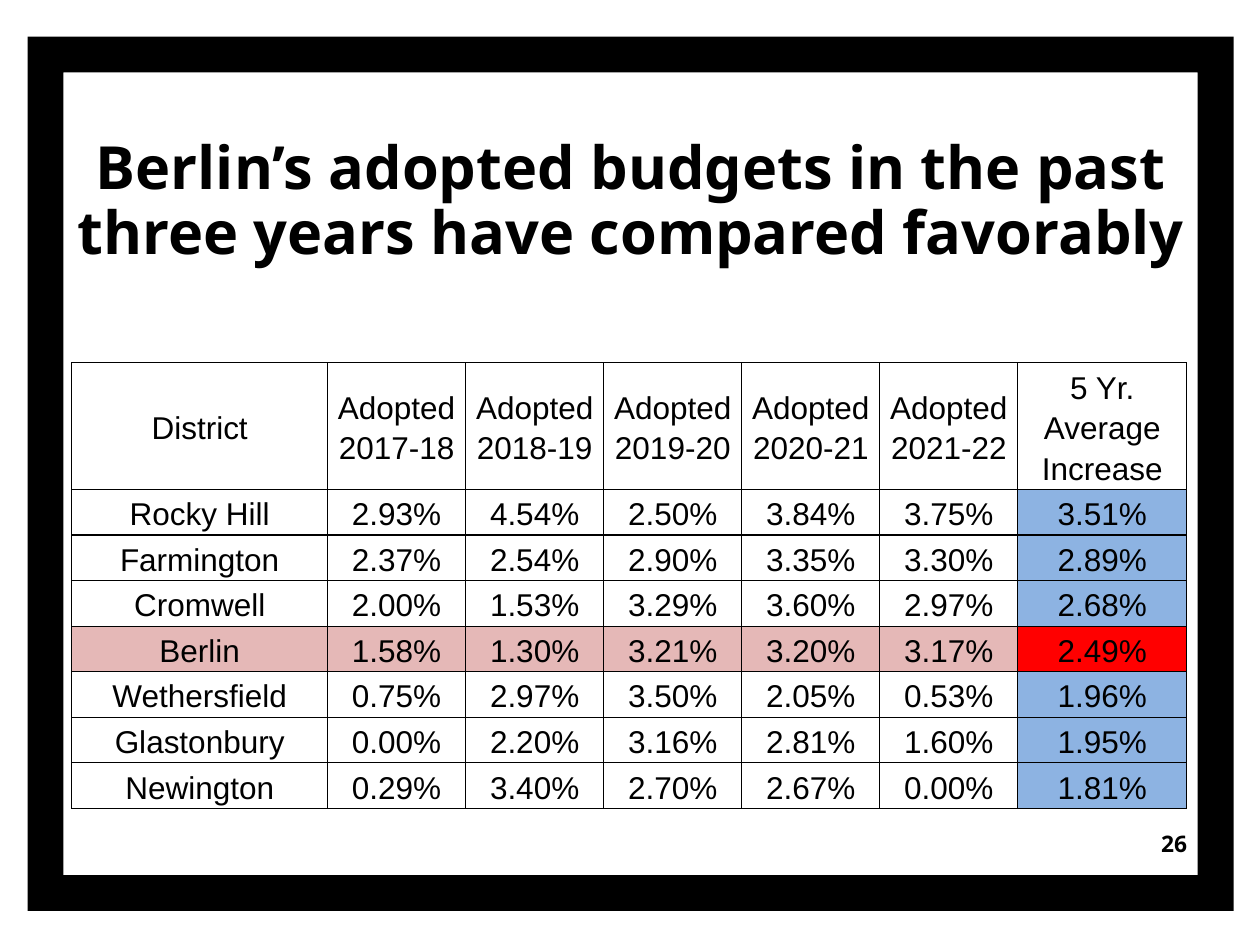
from dataclasses import dataclass

from pptx import Presentation
from pptx.dml.color import RGBColor as Rgb
from pptx.enum.shapes import MSO_SHAPE as Shape
from pptx.enum.text import MSO_ANCHOR as Anchor, MSO_AUTO_SIZE as Fit, PP_ALIGN as Align
from pptx.oxml import parse_xml
from pptx.oxml.ns import nsdecls
from pptx.util import Inches, Pt


@dataclass(frozen=True)
class Theme:
    ink: str = "000000"
    paper: str = "FFFFFF"
    blue: str = "8DB3E2"
    pink: str = "E5B8B7"
    red: str = "FF0000"
    head: str = "Noto Sans"
    body: str = "Arial"
    title: int = 34
    cell: int = 18
    page: int = 13
    rule: float = 0.75


HEADS = (["District"]
         + [f"Adopted 20{year}-{year + 1}" for year in range(17, 22)]
         + ["5 Yr. Average Increase"])
RATES = {
    "Rocky Hill": (2.93, 4.54, 2.50, 3.84, 3.75, 3.51),
    "Farmington": (2.37, 2.54, 2.90, 3.35, 3.30, 2.89),
    "Cromwell": (2.00, 1.53, 3.29, 3.60, 2.97, 2.68),
    "Berlin": (1.58, 1.30, 3.21, 3.20, 3.17, 2.49),
    "Wethersfield": (0.75, 2.97, 3.50, 2.05, 0.53, 1.96),
    "Glastonbury": (0.00, 2.20, 3.16, 2.81, 1.60, 1.95),
    "Newington": (0.29, 3.40, 2.70, 2.67, 0.00, 1.81),
}
HOME = "Berlin"


def write(frame, text, font, size, color, bold=False, align=Align.CENTER, space=1.0):
    para = frame.paragraphs[0]
    para.alignment = align
    para.line_spacing = space
    run = para.add_run()
    run.text = text
    run.font.name = font
    run.font.size = Pt(size)
    run.font.bold = bold
    run.font.color.rgb = Rgb.from_string(color)


def pad(item, side, edge):
    """Set the insets of a text frame or a table cell, in inches."""
    item.margin_left = item.margin_right = Inches(side)
    item.margin_top = item.margin_bottom = Inches(edge)


def rule(cell, color, width):
    """Draw a line on all four sides of a cell; call before filling it."""
    props = cell._tc.get_or_add_tcPr()
    for side in "LRTB":
        props.append(parse_xml(
            f'<a:ln{side} {nsdecls("a")} w="{Pt(width)}"><a:solidFill>'
            f'<a:srgbClr val="{color}"/></a:solidFill></a:ln{side}>'))


class Page:
    """One slide, measured on a grid of 100 columns by 75 rows."""

    def __init__(self, deck, theme):
        self.theme = theme
        self.col = deck.slide_width / 100
        self.row = deck.slide_height / 75
        self.slide = deck.slides.add_slide(deck.slide_layouts[5])
        self.shapes = self.slide.shapes
        back = self.slide.background.fill
        back.solid()
        back.fore_color.rgb = Rgb.from_string(theme.paper)

    def box(self, x, y, wide, high):
        return [int(n) for n in (x * self.col, y * self.row,
                                 wide * self.col, high * self.row)]

    def border(self, *place, thick):
        shape = self.shapes.add_shape(Shape.FRAME, *self.box(*place))
        shape.adjustments[0] = thick
        shape.shadow.inherit = False
        shape.fill.solid()
        shape.fill.fore_color.rgb = Rgb.from_string(self.theme.ink)
        shape.line.fill.background()

    def number(self, text, *place):
        frame = self.shapes.add_textbox(*self.box(*place)).text_frame
        frame.word_wrap = True
        frame.vertical_anchor = Anchor.MIDDLE
        pad(frame, 0.1, 0.1)
        write(frame, text, self.theme.head, self.theme.page, self.theme.ink,
              bold=True, align=Align.RIGHT)

    def title(self, text, *place):
        shape = self.shapes.title
        shape.left, shape.top, shape.width, shape.height = self.box(*place)
        self.shapes._spTree.append(shape._element)  # in front of the border
        frame = shape.text_frame
        frame.auto_size = Fit.NONE
        frame.word_wrap = True
        frame.vertical_anchor = Anchor.MIDDLE
        pad(frame, 0.1, 0.05)
        write(frame, text, self.theme.head, self.theme.title, self.theme.ink,
              bold=True, space=0.9)

    def table(self, rows, x, y, cols, highs, tint):
        """Fill a table; tint gives the fill of a cell by row and column."""
        place = self.box(x, y, sum(cols), sum(highs))
        grid = self.shapes.add_table(len(rows), len(cols), *place).table
        grid.first_row = grid.horz_banding = False
        for col, wide in zip(grid.columns, cols):
            col.width = int(wide * self.col)
        for row, high in zip(grid.rows, highs):
            row.height = int(high * self.row)
        for r, row in enumerate(rows):
            for c, text in enumerate(row):
                self.cell(grid.cell(r, c), text, tint(r, c))

    def cell(self, cell, text, color):
        cell.vertical_anchor = Anchor.MIDDLE
        pad(cell, 0.03, 0.02)
        rule(cell, self.theme.ink, self.theme.rule)
        cell.fill.solid()
        cell.fill.fore_color.rgb = Rgb.from_string(color)
        write(cell.text_frame, text, self.theme.body, self.theme.cell,
              self.theme.ink, space=1.15)


def main():
    deck = Presentation()
    deck.slide_width, deck.slide_height = Inches(10), Inches(7.5)
    theme = Theme()
    page = Page(deck, theme)
    rows = [HEADS] + [[town] + [f"{rate:.2f}%" for rate in rates]
                      for town, rates in RATES.items()]

    def tint(r, c):
        last = c == len(HEADS) - 1
        if rows[r][0] == HOME:
            return theme.red if last else theme.pink
        return theme.blue if last and r else theme.paper

    page.border(2.2, 2.9, 95.7, 69.4, thick=0.041)
    page.number("26", 89.2, 64.1, 6, 5.7)
    page.title("Berlin’s adopted budgets in the past three years "
               "have compared favorably", 4.5, 6.2, 91.1, 19.8)
    page.table(rows, 5.7, 28.8, cols=[20.3] + [10.96] * 5 + [13.4],
               highs=[6.5] + [3.5] * len(RATES), tint=tint)
    deck.save("out.pptx")


if __name__ == "__main__":
    main()
